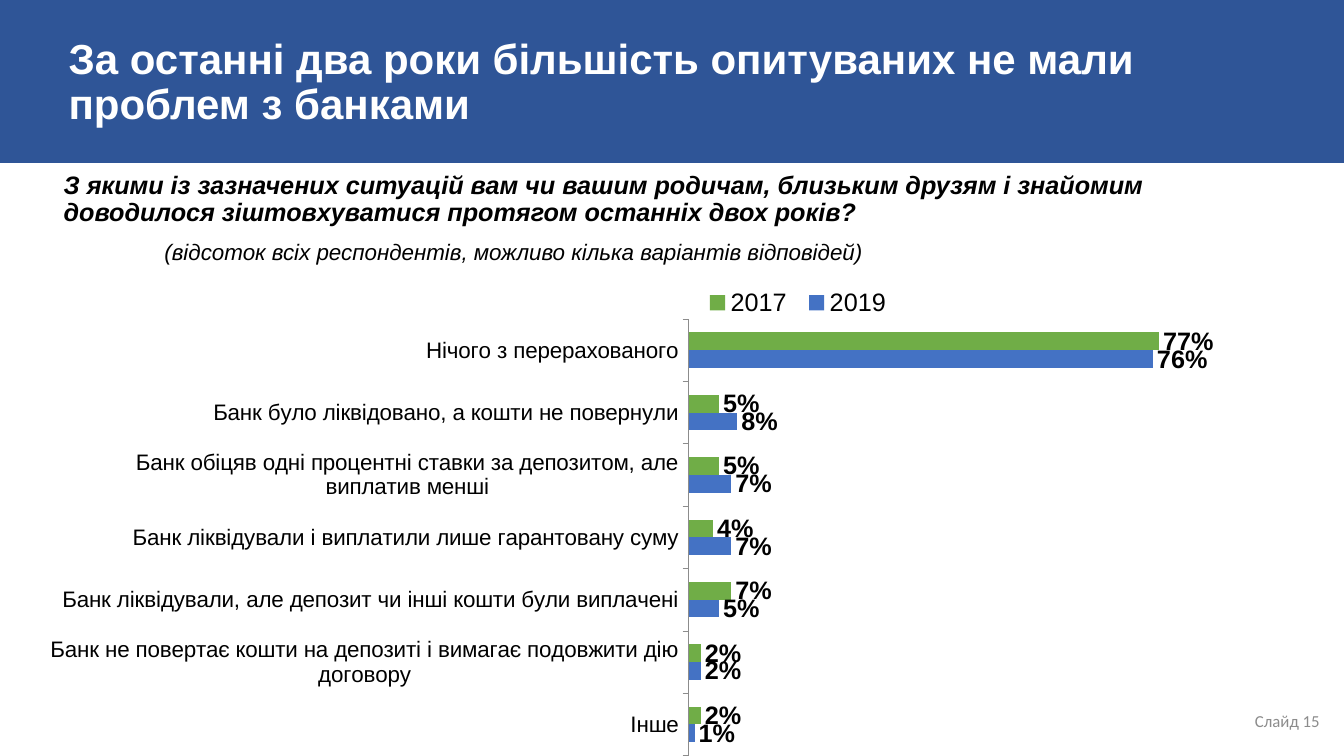
"""Build a survey slide comparing problems with banks in 2017 and 2019."""
from dataclasses import dataclass
from typing import Any, Optional

from lxml.etree import SubElement
from pptx import Presentation
from pptx.chart.data import CategoryChartData
from pptx.dml.color import RGBColor
from pptx.enum.chart import XL_CHART_TYPE, XL_LABEL_POSITION, XL_LEGEND_POSITION, XL_TICK_MARK
from pptx.enum.shapes import MSO_SHAPE
from pptx.enum.text import MSO_ANCHOR, MSO_AUTO_SIZE, PP_ALIGN
from pptx.oxml.ns import qn
from pptx.util import Inches, Pt

COLORS = {
    "band": "2F5597",
    "title": "FFFFFF",
    "text": "000000",
    "muted": "8C8C8C",
    "2019": "4472C4",
    "2017": "70AD47",
}
WIDTH, HEIGHT = Inches(13.33), Inches(7.5)


@dataclass(frozen=True)
class Area:
    """Rectangle in percent of its container."""
    left: float
    top: float
    width: float
    height: float

    def on_slide(self) -> tuple[int, int, int, int]:
        """Return the lengths on the slide."""
        return (int(WIDTH * self.left / 100), int(HEIGHT * self.top / 100),
                int(WIDTH * self.width / 100), int(HEIGHT * self.height / 100))


@dataclass(frozen=True)
class Survey:
    """Percentages of one survey year."""
    year: str
    percentages: tuple[int, ...]


BAND = Area(0, 0, 100, 21.47)
TITLE = Area(4.35, 2.53, 90.32, 17.07)
QUESTION = Area(3.98, 22.13, 92.12, 10.93)
NUMBER = Area(76.44, 92.67, 22.5, 5.33)
CHART = Area(3.53, 38.13, 89.35, 61.87)
PLOT = Area(53.4, 6.6, 45.8, 93.4)
LEGEND = Area(54, 0, 17, 6.2)

ANSWERS = (
    "Інше",
    "Банк не повертає кошти на депозиті і вимагає подовжити дію договору",
    "Банк ліквідували, але депозит чи інші кошти були виплачені",
    "Банк ліквідували і виплатили лише гарантовану суму",
    "Банк обіцяв одні процентні ставки за депозитом, але виплатив менші",
    "Банк було ліквідовано, а кошти не повернули",
    "Нічого з перерахованого",
)
SURVEYS = (
    Survey("2019", (1, 2, 5, 7, 7, 8, 76)),
    Survey("2017", (2, 2, 7, 4, 5, 5, 77)),
)


def color(name: str) -> RGBColor:
    """Look up a colour."""
    return RGBColor.from_string(COLORS[name])


def style_font(font: Any, size: float, name: str = "Arial", tint: str = "text",
               bold: bool = False, italic: bool = False) -> None:
    """Format a font."""
    font.size, font.name, font.bold, font.italic = Pt(size), name, bold, italic
    font.color.rgb = color(tint)


def write(paragraph: Any, text: str, align: PP_ALIGN = PP_ALIGN.LEFT, spacing: Optional[float] = None,
          before: float = 0, indent: float = 0, **font_format: Any) -> None:
    """Fill a paragraph with formatted text and no bullet."""
    paragraph.alignment = align
    paragraph.line_spacing = spacing
    paragraph.space_before = Pt(before)
    properties = paragraph._p.get_or_add_pPr()
    properties.set("marL", str(Inches(indent)))
    properties.set("indent", "0")
    SubElement(properties, qn("a:buNone"))
    run = paragraph.add_run()
    run.text = text
    style_font(run.font, **font_format)


def place(shape: Any, area: Area, anchor: MSO_ANCHOR) -> Any:
    """Move a text shape and return its text frame."""
    shape.left, shape.top, shape.width, shape.height = area.on_slide()
    frame = shape.text_frame
    frame.word_wrap = True
    frame.auto_size = MSO_AUTO_SIZE.NONE
    frame.vertical_anchor = anchor
    return frame


def set_layout(parent: Any, index: int, area: Area, inner: bool = False) -> None:
    """Give a chart part a manual layout."""
    for existing in parent.findall(qn("c:layout")):
        parent.remove(existing)
    layout = SubElement(parent, qn("c:layout"))
    parent.insert(index, layout)
    manual = SubElement(layout, qn("c:manualLayout"))
    settings = {"layoutTarget": "inner"} if inner else {}
    settings |= {"xMode": "edge", "yMode": "edge"}
    settings |= {"x": str(area.left / 100), "y": str(area.top / 100),
                 "w": str(area.width / 100), "h": str(area.height / 100)}
    for tag, value in settings.items():
        SubElement(manual, qn(f"c:{tag}")).set("val", value)


def add_band(slide: Any) -> None:
    """Put the coloured band behind the title."""
    band = slide.shapes.add_shape(MSO_SHAPE.RECTANGLE, *BAND.on_slide())
    band.shadow.inherit = False
    band.fill.solid()
    band.fill.fore_color.rgb = color("band")
    band.line.color.rgb = color("band")
    band.line.width = Pt(1)
    slide.shapes._spTree.insert(2, band._element)


def add_survey_chart(slide: Any) -> None:
    """Add the clustered bars of both years."""
    data = CategoryChartData(number_format="0%")
    data.categories = ANSWERS
    for survey in SURVEYS:
        data.add_series(survey.year, [value / 100 for value in survey.percentages])
    chart = slide.shapes.add_chart(XL_CHART_TYPE.BAR_CLUSTERED, *CHART.on_slide(), data).chart
    style_font(chart.font, 18, "Calibri")
    chart.has_title = False

    chart.has_legend = True
    chart.legend.position = XL_LEGEND_POSITION.RIGHT
    chart.legend.include_in_layout = False
    style_font(chart.legend.font, 18)
    set_layout(chart.legend._element, 1, LEGEND)

    plot = chart.plots[0]
    plot.gap_width, plot.overlap, plot.vary_by_categories = 150, 0, False
    set_layout(chart._chartSpace.chart.plotArea, 0, PLOT, inner=True)
    for series in plot.series:
        series.format.fill.solid()
        series.format.fill.fore_color.rgb = color(series.name)
        series.invert_if_negative = False
        labels = series.data_labels
        labels.show_value = True
        labels.position = XL_LABEL_POSITION.OUTSIDE_END
        labels.number_format, labels.number_format_is_linked = "0%", False
        style_font(labels.font, 18, bold=True)

    answers_axis = chart.category_axis
    answers_axis.major_tick_mark = XL_TICK_MARK.OUTSIDE
    answers_axis.has_major_gridlines = False
    answers_axis.format.line.color.rgb = color("muted")
    answers_axis.format.line.width = Pt(0.5)
    style_font(answers_axis.tick_labels.font, 16)
    percent_axis = chart.value_axis
    percent_axis.minimum_scale, percent_axis.maximum_scale = 0, 0.9
    percent_axis.has_major_gridlines = False
    percent_axis.visible = False


def main() -> None:
    """Build and save the presentation."""
    presentation = Presentation()
    presentation.slide_width, presentation.slide_height = WIDTH, HEIGHT
    slide = presentation.slides.add_slide(presentation.slide_layouts[1])
    add_band(slide)

    title = place(slide.shapes.title, TITLE, MSO_ANCHOR.MIDDLE)
    write(title.paragraphs[0], "За останні два роки більшість опитуваних не мали проблем з банками",
          spacing=0.9, size=30, tint="title", bold=True)

    question = place(slide.placeholders[1], QUESTION, MSO_ANCHOR.TOP)
    write(question.paragraphs[0],
          "З якими із зазначених ситуацій вам чи вашим родичам, близьким друзям і знайомим "
          "доводилося зіштовхуватися протягом останніх двох років?",
          spacing=0.9, before=10, size=18, bold=True, italic=True)
    write(question.add_paragraph(), "(відсоток всіх респондентів, можливо кілька варіантів відповідей)",
          spacing=0.9, before=10, indent=1, size=16, italic=True)

    number = place(slide.shapes.add_textbox(*NUMBER.on_slide()), NUMBER, MSO_ANCHOR.MIDDLE)
    write(number.paragraphs[0], "Слайд 15", align=PP_ALIGN.RIGHT, size=12, name="Calibri", tint="muted")
    add_survey_chart(slide)
    presentation.save("out.pptx")


if __name__ == "__main__":
    main()
